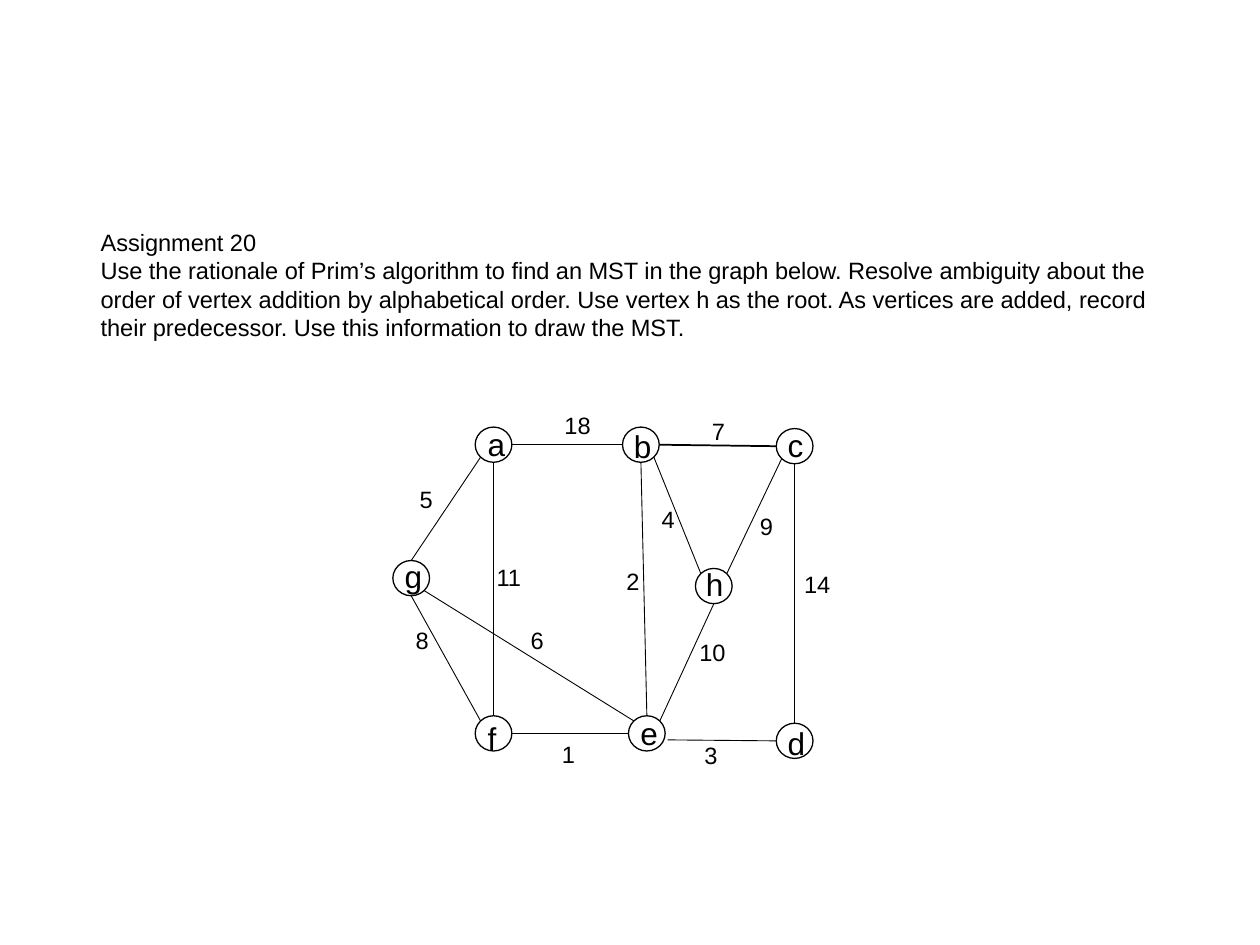
"""Build a slide that poses a minimum spanning tree exercise on a weighted graph."""
from math import cos, radians, sin
from typing import NamedTuple

from lxml.etree import SubElement
from pptx import Presentation
from pptx.dml.color import RGBColor
from pptx.enum.shapes import MSO_CONNECTOR, MSO_SHAPE
from pptx.enum.text import MSO_AUTO_SIZE
from pptx.oxml.ns import qn
from pptx.slide import Slide
from pptx.text.text import TextFrame
from pptx.util import Cm, Pt

FONT = "Arial"
BLACK = "000000"
VERTEX_WIDTH, VERTEX_HEIGHT = 0.74, 0.71
LETTER_HEIGHT = 0.97
WEIGHT_WIDTH, WEIGHT_HEIGHT = 0.97, 0.76
LETTER_SIZE, BODY_SIZE = 18, 13.5
RIGHT, TOP_RIGHT, TOP, TOP_LEFT, LEFT, BOTTOM_LEFT, BOTTOM, BOTTOM_RIGHT = range(0, 360, 45)

QUESTION = (
    "Assignment 20",
    "Use the rationale of Prim’s algorithm to find an MST in the graph below. "
    "Resolve ambiguity about the order of vertex addition by alphabetical order. "
    "Use vertex h as the root. As vertices are added, record their predecessor. "
    "Use this information to draw the MST.",
)


class Vertex(NamedTuple):
    left: float
    top: float
    letter_left: float
    letter_top: float
    letter_width: float

    def rim(self, angle: int) -> tuple[float, float]:
        return (
            self.left + VERTEX_WIDTH / 2 * (1 + cos(radians(angle))),
            self.top + VERTEX_HEIGHT / 2 * (1 - sin(radians(angle))),
        )


class Edge(NamedTuple):
    start: str
    start_angle: int
    end: str
    end_angle: int
    weight: int
    weight_left: float
    weight_top: float
    thickness: float = 0.5
    start_shift: tuple[float, float] = (0, 0)


VERTICES = {
    "a": Vertex(9.58, 8.61, 9.65, 8.46, 0.97),
    "b": Vertex(12.55, 8.61, 12.6, 8.51, 0.74),
    "c": Vertex(15.65, 8.64, 15.7, 8.48, 0.89),
    "d": Vertex(15.65, 14.58, 15.7, 14.5, 1.04),
    "e": Vertex(12.67, 14.43, 12.73, 14.3, 0.74),
    "f": Vertex(9.58, 14.43, 9.65, 14.4, 0.97),
    "g": Vertex(7.92, 11.3, 7.98, 11.13, 0.89),
    "h": Vertex(14.02, 11.46, 14.05, 11.3, 0.89),
}

EDGES = (
    Edge("b", RIGHT, "c", LEFT, 7, 14.17, 8.31, thickness=1),
    Edge("c", BOTTOM, "d", TOP, 14, 16.03, 11.38),
    Edge("a", BOTTOM_LEFT, "g", TOP, 5, 8.28, 9.68),
    Edge("g", BOTTOM, "f", TOP_LEFT, 8, 8.2, 12.52),
    Edge("g", BOTTOM_RIGHT, "e", TOP_LEFT, 6, 10.52, 12.52),
    Edge("f", TOP, "a", BOTTOM, 11, 9.83, 11.25),
    Edge("a", RIGHT, "b", LEFT, 18, 11.2, 8.18),
    Edge("h", BOTTOM, "e", TOP_RIGHT, 10, 13.92, 12.75),
    Edge("c", BOTTOM_LEFT, "h", TOP_RIGHT, 9, 15.14, 10.21),
    Edge("b", BOTTOM, "e", TOP, 2, 12.45, 11.33),
    Edge("b", BOTTOM_RIGHT, "h", TOP_LEFT, 4, 13.16, 10.08),
    Edge("e", RIGHT, "d", LEFT, 3, 14.02, 14.83, start_shift=(0.05, 0.13)),
    Edge("f", RIGHT, "e", LEFT, 1, 11.15, 14.81),
)


def color(hex_code: str) -> RGBColor:
    return RGBColor.from_string(hex_code)


def add_text(slide: Slide, text: str, left: float, top: float, width: float,
             height: float, size: float) -> TextFrame:
    frame = slide.shapes.add_textbox(Cm(left), Cm(top), Cm(width), Cm(height)).text_frame
    frame.word_wrap = True
    frame.auto_size = MSO_AUTO_SIZE.SHAPE_TO_FIT_TEXT
    frame.text = text
    for paragraph in frame.paragraphs:
        for run in paragraph.runs:
            run.font.name = FONT
            run.font.size = Pt(size)
            run.font.color.rgb = color(BLACK)
    return frame


def add_label(slide: Slide, text: str, left: float, top: float, width: float,
              height: float, size: float) -> None:
    frame = add_text(slide, text, left, top, width, height, size)
    frame.margin_left = frame.margin_right = Cm(0.18)
    frame.margin_top = frame.margin_bottom = Cm(0.1)


def add_circle(slide: Slide, vertex: Vertex) -> None:
    circle = slide.shapes.add_shape(
        MSO_SHAPE.OVAL, Cm(vertex.left), Cm(vertex.top), Cm(VERTEX_WIDTH), Cm(VERTEX_HEIGHT))
    circle.shadow.inherit = False
    circle.fill.background()
    circle.line.color.rgb = color(BLACK)
    circle.line.width = Pt(0.75)


def add_edge(slide: Slide, edge: Edge) -> None:
    start_x, start_y = VERTICES[edge.start].rim(edge.start_angle)
    end_x, end_y = VERTICES[edge.end].rim(edge.end_angle)
    shift_x, shift_y = edge.start_shift
    connector = slide.shapes.add_connector(
        MSO_CONNECTOR.STRAIGHT, Cm(start_x + shift_x), Cm(start_y + shift_y), Cm(end_x), Cm(end_y))
    connector.line.color.rgb = color(BLACK)
    connector.line.width = Pt(edge.thickness)
    SubElement(connector._element.spPr, qn("a:effectLst"))


def main() -> None:
    presentation = Presentation()
    presentation.slide_width, presentation.slide_height = Cm(25.4), Cm(19.05)
    slide = presentation.slides.add_slide(presentation.slide_layouts[6])
    add_text(slide, "\n".join(QUESTION), 1.78, 4.47, 22.25, 2.57, BODY_SIZE)
    for vertex in VERTICES.values():
        add_circle(slide, vertex)
    for letter, vertex in VERTICES.items():
        add_label(slide, letter, vertex.letter_left, vertex.letter_top,
                  vertex.letter_width, LETTER_HEIGHT, LETTER_SIZE)
    for edge in EDGES:
        add_edge(slide, edge)
    for edge in EDGES:
        add_label(slide, str(edge.weight), edge.weight_left, edge.weight_top,
                  WEIGHT_WIDTH, WEIGHT_HEIGHT, BODY_SIZE)
    presentation.save("out.pptx")


if __name__ == "__main__":
    main()
